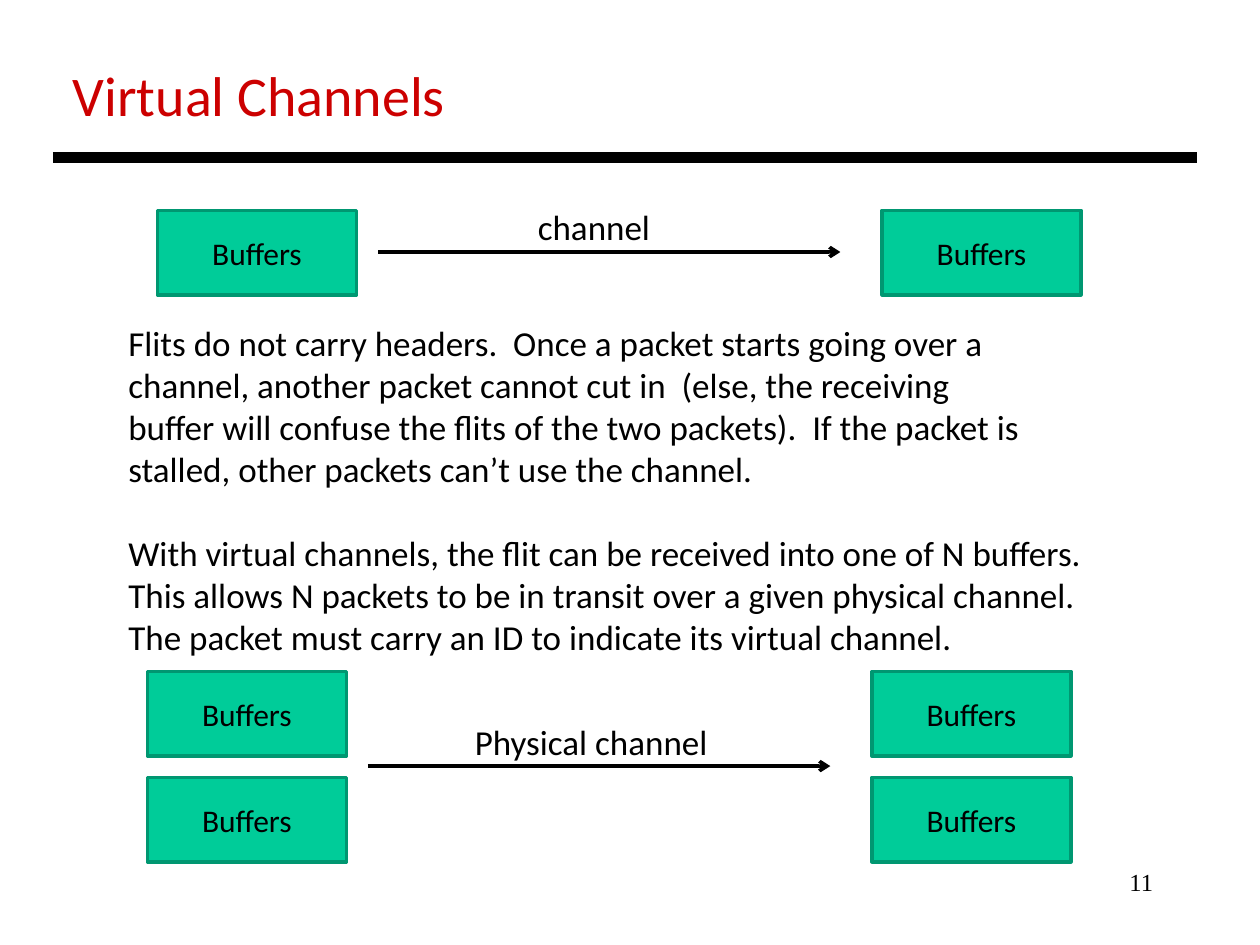
from dataclasses import dataclass

from lxml import etree
from pptx import Presentation
from pptx.dml.color import RGBColor
from pptx.enum.shapes import MSO_CONNECTOR, MSO_SHAPE
from pptx.enum.text import MSO_ANCHOR, MSO_AUTO_SIZE, PP_ALIGN
from pptx.oxml.ns import qn
from pptx.util import Inches, Pt

RECTANGLE = MSO_SHAPE.RECTANGLE
STRAIGHT = MSO_CONNECTOR.STRAIGHT
LEFT, CENTER, RIGHT = PP_ALIGN.LEFT, PP_ALIGN.CENTER, PP_ALIGN.RIGHT
MIDDLE = MSO_ANCHOR.MIDDLE
FIT_SHAPE = MSO_AUTO_SIZE.SHAPE_TO_FIT_TEXT

BLACK = RGBColor(0x00, 0x00, 0x00)
TITLE_RED = RGBColor(0xCC, 0x00, 0x00)
BUFFER_GREEN = RGBColor(0x00, 0xCC, 0x99)
BUFFER_EDGE = RGBColor(0x00, 0x97, 0x71)

BUFFER_W, BUFFER_H = 1.58, 0.67
RECEIVER_OFFSET = 5.75
ARROW_OFFSET, ARROW_LENGTH = 1.75, 3.67


@dataclass
class Label:
    lines: list[str]
    left: float
    top: float
    width: float
    height: float
    size: int = 20
    color: RGBColor = BLACK
    font: str = "Calibri"
    align: PP_ALIGN = LEFT
    fit: bool = True


@dataclass
class Link:
    """Sender and receiver buffers, one row per entry in tops, and their channel."""
    left: float
    tops: list[float]
    arrow_y: float


PARAGRAPHS = [
    ["Flits do not carry headers.  Once a packet starts going over a",
     "channel, another packet cannot cut in  (else, the receiving",
     "buffer will confuse the flits of the two packets).  If the packet is",
     "stalled, other packets can’t use the channel."],
    ["With virtual channels, the flit can be received into one of N buffers.",
     "This allows N packets to be in transit over a given physical channel.",
     "The packet must carry an ID to indicate its virtual channel."],
]

LABELS = [
    Label(["11"], 7.17, 6.83, 2.08, 0.5, 14, font="Times New Roman",
          align=RIGHT, fit=False),
    Label(["Virtual Channels"], 0.48, 0.43, 3.19, 0.64, 32, TITLE_RED),
    Label(["channel"], 4.17, 1.58, 1.1, 0.44),
    Label(["Physical channel"], 3.67, 5.67, 2.07, 0.44),
]
BODY = Label(sum(PARAGRAPHS, []), 0.92, 2.5, 7.85, 2.79)

LINKS = [
    Link(1.25, [1.67], 2.0),
    Link(1.17, [5.33, 6.17], 6.08),
]


def write_lines(tf, lines: list[str], size: int, color: RGBColor,
                font: str, align: PP_ALIGN) -> None:
    tf.text = "\n".join(lines)
    for p in tf.paragraphs:
        p.alignment = align
        for r in p.runs:
            r.font.size = Pt(size)
            r.font.name = font
            r.font.color.rgb = color


def add_label(slide, label: Label):
    box = slide.shapes.add_textbox(Inches(label.left), Inches(label.top),
                                   Inches(label.width), Inches(label.height))
    tf = box.text_frame
    tf.word_wrap = not label.fit
    if label.fit:
        tf.auto_size = FIT_SHAPE
    write_lines(tf, label.lines, label.size, label.color, label.font, label.align)
    return tf


def add_buffer(slide, left: float, top: float) -> None:
    sp = slide.shapes.add_shape(RECTANGLE, Inches(left), Inches(top),
                                Inches(BUFFER_W), Inches(BUFFER_H))
    sp.shadow.inherit = False
    sp.fill.solid()
    sp.fill.fore_color.rgb = BUFFER_GREEN
    sp.line.color.rgb = BUFFER_EDGE
    sp.line.width = Pt(2)
    sp.text_frame.vertical_anchor = MIDDLE
    write_lines(sp.text_frame, ["Buffers"], 18, BLACK, "Calibri", CENTER)


def add_horizontal(slide, left: float, right: float, y: float,
                   width: float, arrow: bool = False) -> None:
    line = slide.shapes.add_connector(STRAIGHT, Inches(left), Inches(y),
                                      Inches(right), Inches(y))
    line.line.color.rgb = BLACK
    line.line.width = Pt(width)
    if arrow:
        etree.SubElement(line.line._get_or_add_ln(), qn("a:tailEnd"), type="arrow")
    etree.SubElement(line._element.spPr, qn("a:effectLst"))


def add_link(slide, link: Link) -> None:
    for top in link.tops:
        for left in (link.left, link.left + RECEIVER_OFFSET):
            add_buffer(slide, left, top)
    start = link.left + ARROW_OFFSET
    add_horizontal(slide, start, start + ARROW_LENGTH, link.arrow_y, 2, arrow=True)


def main() -> None:
    prs = Presentation()
    prs.slide_width, prs.slide_height = Inches(10), Inches(7.5)
    slide = prs.slides.add_slide(prs.slide_layouts[6])

    add_horizontal(slide, 0.42, 9.5, 1.25, 6)
    for link in LINKS:
        add_link(slide, link)
    for label in LABELS:
        add_label(slide, label)
    body = add_label(slide, BODY)
    body.paragraphs[len(PARAGRAPHS[0])].space_before = Pt(24)

    prs.save("out.pptx")


if __name__ == "__main__":
    main()
